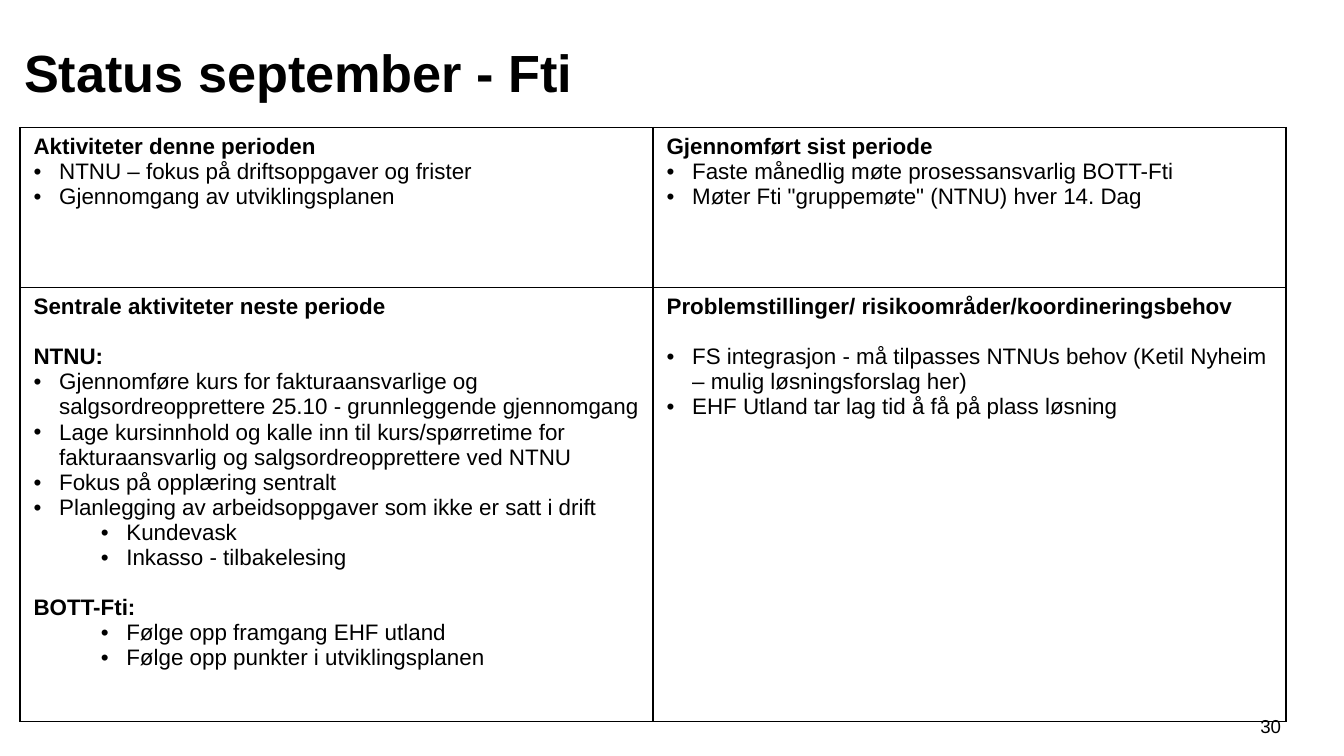
from lxml import etree
from pptx import Presentation
from pptx.dml.color import RGBColor
from pptx.enum.text import MSO_ANCHOR, PP_ALIGN
from pptx.oxml.ns import qn
from pptx.util import Inches, Pt

BLACK = RGBColor(0, 0, 0)
WHITE = RGBColor(255, 255, 255)
FONT = "Arial"
BOTTOM, TOP = MSO_ANCHOR.BOTTOM, MSO_ANCHOR.TOP
CENTER, LEFT = PP_ALIGN.CENTER, PP_ALIGN.LEFT
HEAD, ITEM, SUB = "head", "item", "sub"
INDENT = {ITEM: 0.19, SUB: 0.69}
GAP = Pt(13.4)  # one line of 12 pt text

# Each cell holds (kind, text, gap above)
CELLS = [
    [
        [
            (HEAD, "Aktiviteter denne perioden", False),
            (ITEM, "NTNU – fokus på driftsoppgaver og frister", False),
            (ITEM, "Gjennomgang av utviklingsplanen", False),
        ],
        [
            (HEAD, "Gjennomført sist periode", False),
            (ITEM, "Faste månedlig møte prosessansvarlig BOTT-Fti", False),
            (ITEM, "Møter Fti \"gruppemøte\" (NTNU) hver 14. Dag", False),
        ],
    ],
    [
        [
            (HEAD, "Sentrale aktiviteter neste periode", False),
            (HEAD, "NTNU:", True),
            (ITEM, "Gjennomføre kurs for fakturaansvarlige og salgsordreopprettere "
                   "25.10 - grunnleggende gjennomgang", False),
            (ITEM, "Lage kursinnhold og kalle inn til kurs/spørretime for "
                   "fakturaansvarlig og salgsordreopprettere ved NTNU", False),
            (ITEM, "Fokus på opplæring sentralt", False),
            (ITEM, "Planlegging av arbeidsoppgaver som ikke er satt i drift", False),
            (SUB, "Kundevask", False),
            (SUB, "Inkasso - tilbakelesing", False),
            (HEAD, "BOTT-Fti:", True),
            (SUB, "Følge opp framgang EHF utland", False),
            (SUB, "Følge opp punkter i utviklingsplanen", False),
        ],
        [
            (HEAD, "Problemstillinger/ risikoområder/koordineringsbehov", False),
            (ITEM, "FS integrasjon - må tilpasses NTNUs behov (Ketil Nyheim "
                   "– mulig løsningsforslag her)", True),
            (ITEM, "EHF Utland tar lag tid å få på plass løsning", False),
        ],
    ],
]


def add_text(para, text, size, bold=False):
    run = para.add_run()
    run.text = text
    run.font.name = FONT
    run.font.size = Pt(size)
    run.font.bold = bold
    run.font.color.rgb = BLACK


def add_border(cell):
    props = cell._tc.get_or_add_tcPr()
    for i, side in enumerate(("lnL", "lnR", "lnT", "lnB")):
        line = etree.Element(qn(f"a:{side}"), w=str(Pt(1)))
        fill = etree.SubElement(line, qn("a:solidFill"))
        etree.SubElement(fill, qn("a:srgbClr"), val=str(BLACK))
        props.insert(i, line)


deck = Presentation()
deck.slide_width = Inches(10)
deck.slide_height = Inches(10) * 9 // 16
slide = deck.slides.add_slide(deck.slide_layouts[5])

# Title
title = slide.shapes.title
title.left, title.top = Inches(0.08), Inches(0.14)
title.width, title.height = Inches(9.17), Inches(0.71)
title.text_frame.vertical_anchor = BOTTOM
title.text_frame.margin_bottom = Inches(0.08)
para = title.text_frame.paragraphs[0]
para.alignment = LEFT
add_text(para, "Status september - Fti", 28, True)

# Status table
table = slide.shapes.add_table(
    2, 2, Inches(0.15), Inches(0.95), Inches(9.42), Inches(4.42)).table
table.first_row = False
table.horz_banding = False
for row, height in zip(table.rows, (1.19, 3.23)):
    row.height = Inches(height)

for r, row in enumerate(CELLS):
    for c, lines in enumerate(row):
        cell = table.cell(r, c)
        cell.fill.solid()
        cell.fill.fore_color.rgb = WHITE
        add_border(cell)
        frame = cell.text_frame
        for i, (kind, text, gap) in enumerate(lines):
            para = frame.paragraphs[0] if i == 0 else frame.add_paragraph()
            if kind != HEAD:
                props = para._p.get_or_add_pPr()
                props.set("marL", str(Inches(INDENT[kind])))
                props.set("indent", str(-Inches(0.19)))
                etree.SubElement(props, qn("a:buFont"), typeface=FONT)
                etree.SubElement(props, qn("a:buChar"), char="•")
            if kind == SUB:
                para.level = 1
            if gap:
                para.space_before = GAP
            add_text(para, text, 12, kind == HEAD)

# Page number
box = slide.shapes.add_textbox(
    Inches(9.27), Inches(5.27), Inches(0.37), Inches(0.3))
box.text_frame.word_wrap = True
box.text_frame.vertical_anchor = TOP
para = box.text_frame.paragraphs[0]
para.alignment = CENTER
add_text(para, "30", 10)

deck.save("out.pptx")
